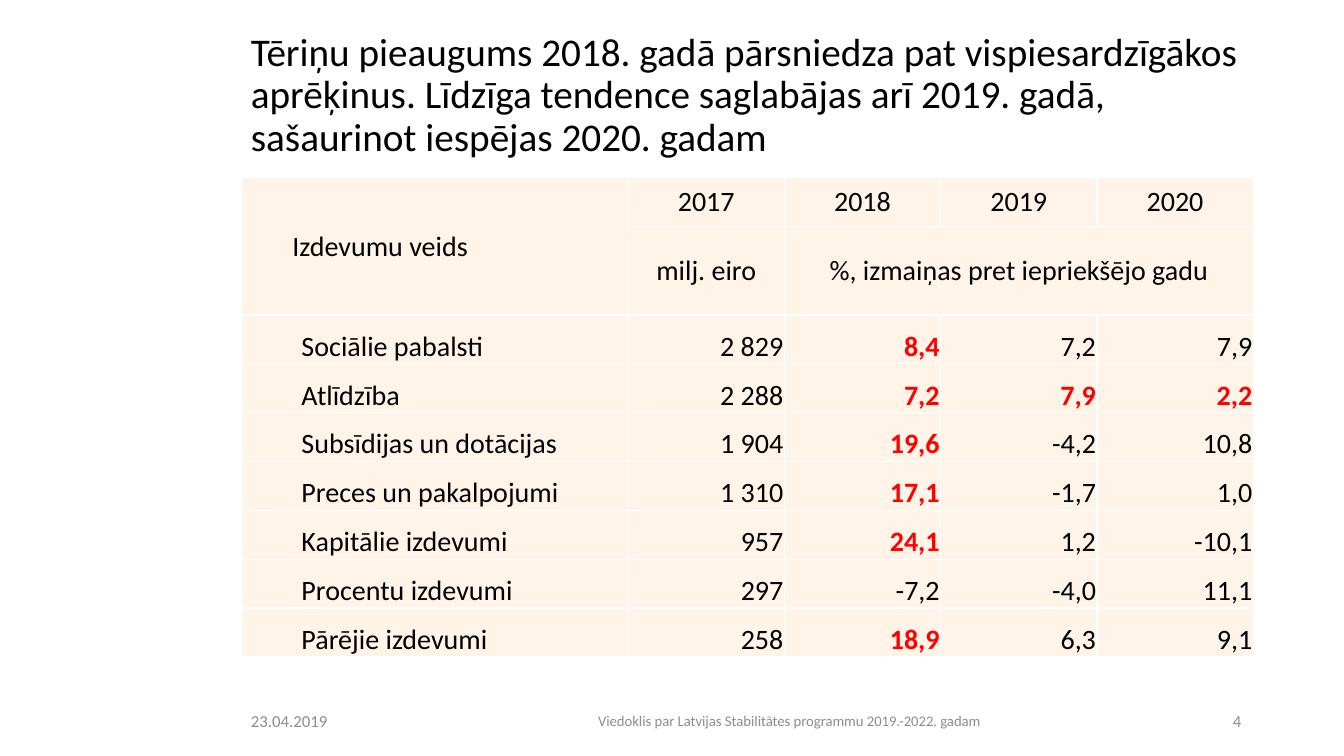
from lxml import etree
from pptx import Presentation
from pptx import util as u
from pptx.dml.color import RGBColor
from pptx.enum import text
from pptx.oxml import ns

LEFT, CENTER, RIGHT = text.PP_ALIGN.LEFT, text.PP_ALIGN.CENTER, text.PP_ALIGN.RIGHT
MIDDLE, BOTTOM = text.MSO_ANCHOR.MIDDLE, text.MSO_ANCHOR.BOTTOM


def style(paragraph, size, color="000000", align=LEFT, bold=False):
    paragraph.alignment = align
    paragraph.font.name = "Calibri"
    paragraph.font.size = u.Pt(size)
    paragraph.font.bold = bold
    paragraph.font.color.rgb = RGBColor.from_string(color)


def add_border(cell, side):
    line = etree.SubElement(cell._tc.get_or_add_tcPr(), ns.qn(f"a:{side}"), w=str(u.Pt(1)))
    fill = etree.SubElement(line, ns.qn("a:solidFill"))
    etree.SubElement(fill, ns.qn("a:srgbClr"), val="FFFFFF")


presentation = Presentation()
presentation.slide_width = u.Inches(13.33)
presentation.slide_height = u.Inches(7.5)
slide = presentation.slides.add_slide(presentation.slide_layouts[6])

title = ("Tēriņu pieaugums 2018. gadā pārsniedza pat vispiesardzīgākos aprēķinus. "
         "Līdzīga tendence saglabājas arī 2019. gadā, sašaurinot iespējas 2020. gadam")
footer = "Viedoklis par Latvijas Stabilitātes programmu 2019.-2022. gadam"
text_boxes = [
    (title, 2.39, 0.4, 10.02, 1.11, 28, "000000", LEFT),
    ("23.04.2019", 2.39, 6.95, 1.64, 0.4, 12, "8C8C8C", LEFT),
    (footer, 4.31, 6.95, 7.04, 0.4, 10.5, "8C8C8C", CENTER),
    ("4", 11.62, 6.95, 0.79, 0.4, 12, "8C8C8C", RIGHT),
]
for words, left, top, width, height, size, color, align in text_boxes:
    box = slide.shapes.add_textbox(u.Inches(left), u.Inches(top), u.Inches(width), u.Inches(height))
    frame = box.text_frame
    frame.word_wrap = True
    frame.vertical_anchor = MIDDLE
    paragraph = frame.paragraphs[0]
    paragraph.text = words
    style(paragraph, size, color, align)
    if words == title:
        paragraph.line_spacing = 0.9

rows = [
    ["Izdevumu veids", "2017", "2018", "2019", "2020"],
    ["", "milj. eiro", "%, izmaiņas pret iepriekšējo gadu", "", ""],
    ["Sociālie pabalsti", "2 829", "8,4", "7,2", "7,9"],
    ["Atlīdzība", "2 288", "7,2", "7,9", "2,2"],
    ["Subsīdijas un dotācijas", "1 904", "19,6", "-4,2", "10,8"],
    ["Preces un pakalpojumi", "1 310", "17,1", "-1,7", "1,0"],
    ["Kapitālie izdevumi", "957", "24,1", "1,2", "-10,1"],
    ["Procentu izdevumi", "297", "-7,2", "-4,0", "11,1"],
    ["Pārējie izdevumi", "258", "18,9", "6,3", "9,1"],
]
highlighted = {(2, 2), (3, 2), (3, 3), (3, 4), (4, 2), (5, 2), (6, 2), (8, 2)}
header_rows = 2

table = slide.shapes.add_table(
    len(rows), len(rows[0]), u.Inches(2.39), u.Inches(1.76), u.Inches(10.02), u.Inches(4.76)).table
for index, column in enumerate(table.columns):
    column.width = u.Inches(1.55 if index else 3.84)
for index, row in enumerate(table.rows):
    row.height = u.Inches(0.88 if index == 1 else 0.485)
table.cell(0, 0).merge(table.cell(1, 0))
table.cell(1, 2).merge(table.cell(1, 4))

for row_index, values in enumerate(rows):
    is_header = row_index < header_rows
    for column_index, value in enumerate(values):
        cell = table.cell(row_index, column_index)
        is_label = column_index == 0
        cell.margin_left = u.Inches(0.1 if is_label and not is_header else 0.01)
        cell.margin_top = cell.margin_right = u.Inches(0.01)
        cell.margin_bottom = 0
        cell.vertical_anchor = MIDDLE if is_header else BOTTOM
        for side in ("lnL", "lnR", "lnT", "lnB"):
            add_border(cell, side)
        cell.fill.solid()
        cell.fill.fore_color.rgb = RGBColor.from_string("FFF4E7")
        paragraph = cell.text_frame.paragraphs[0]
        paragraph.text = value
        if is_label:
            paragraph.level = 1
            properties = paragraph._p.get_or_add_pPr()
            properties.set("marL", str(u.Inches(0.5)))
            properties.set("indent", "0")
        align = LEFT if is_label else CENTER if is_header else RIGHT
        is_red = (row_index, column_index) in highlighted
        style(paragraph, 20, "FF0000" if is_red else "000000", align, is_red)

presentation.save("out.pptx")
